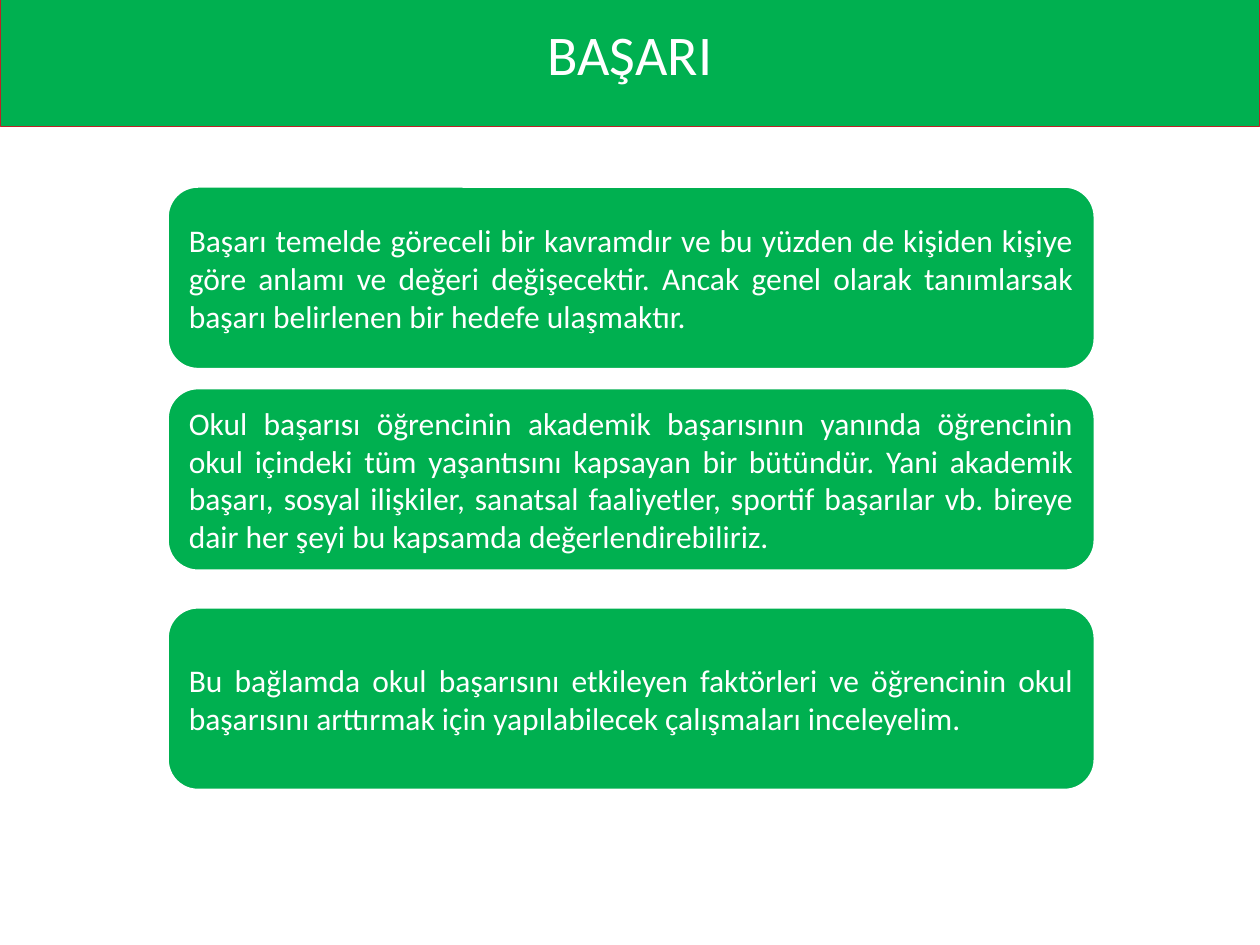
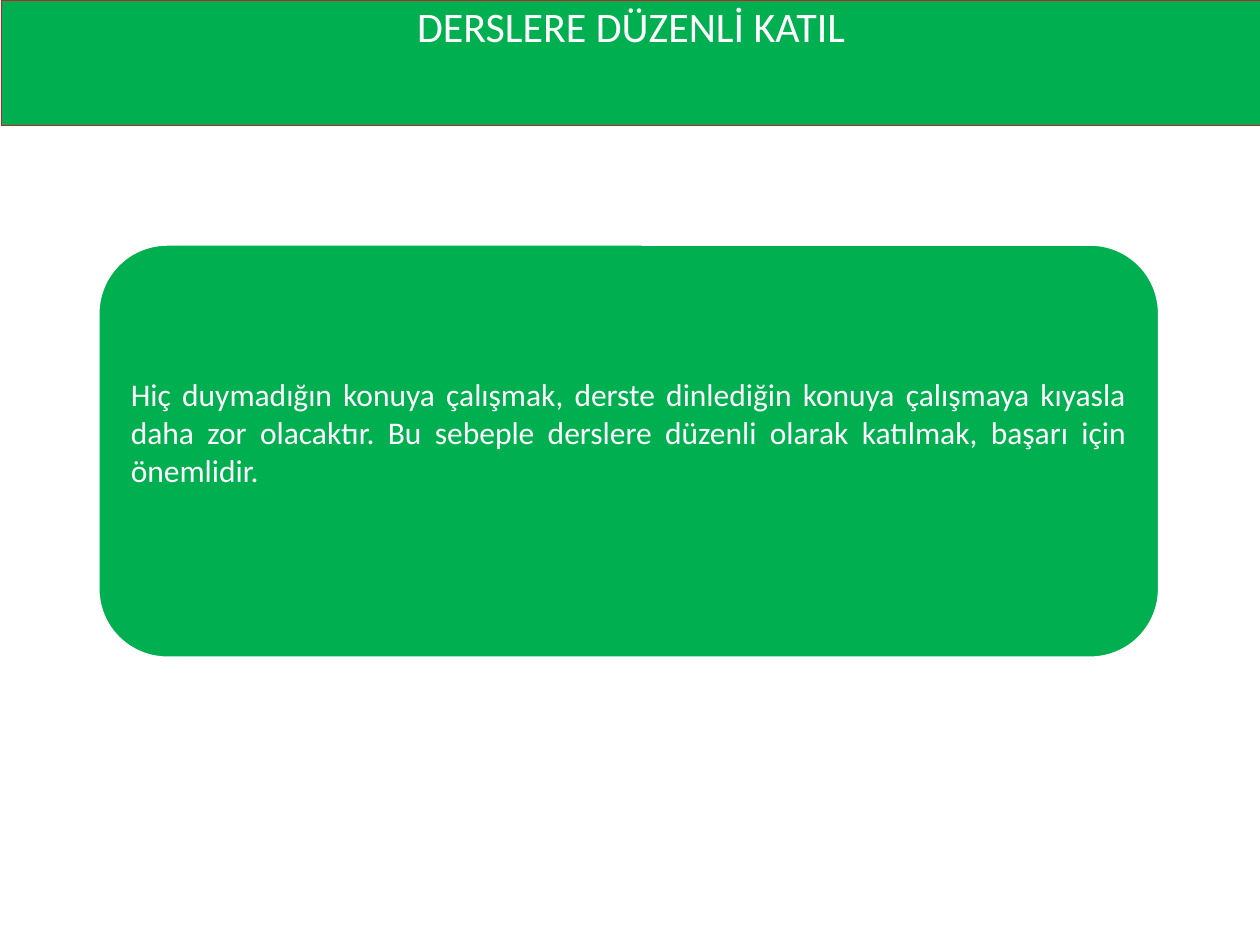
from dataclasses import dataclass

from pptx import Presentation
from pptx.dml.color import RGBColor
from pptx.enum.shapes import MSO_SHAPE
from pptx.enum.text import MSO_ANCHOR, PP_ALIGN
from pptx.slide import Slide
from pptx.util import Inches, Pt

GREEN = "00B050"
RED = "BB2326"
WHITE = "FFFFFF"
FONT = "Calibri"


@dataclass(frozen=True)
class Panel:
    """A green shape with white text; lengths are in inches, sizes in points."""

    text: str
    left: float
    top: float
    width: float
    height: float
    size: int = 18
    shape: MSO_SHAPE = MSO_SHAPE.ROUNDED_RECTANGLE
    border: str = WHITE
    border_width: float = 1.5
    align: PP_ALIGN = PP_ALIGN.JUSTIFY
    anchor: MSO_ANCHOR = MSO_ANCHOR.MIDDLE
    line_spacing: float = 1.0
    bottom_inset: float = 0.05


def title_band(text: str, left: float, top: float, size: int, anchor: MSO_ANCHOR) -> Panel:
    """Describe a full-width title band whose lower edge is one inch down."""
    return Panel(text, left, top, 10, 1 - top, size, MSO_SHAPE.RECTANGLE,
                 RED, 0.5, PP_ALIGN.CENTER, anchor, 0.9)


def success_card(text: str, top: float) -> Panel:
    return Panel(text, 1.33, top, 7.36, 1.45)


SLIDES = [
    [
        title_band("BAŞARI", 0, -0.09, 32, MSO_ANCHOR.MIDDLE),
        success_card(
            "Başarı temelde göreceli bir kavramdır ve bu yüzden de kişiden kişiye göre "
            "anlamı ve değeri değişecektir. Ancak genel olarak tanımlarsak başarı "
            "belirlenen bir hedefe ulaşmaktır.", 1.48),
        success_card(
            "Okul başarısı öğrencinin akademik başarısının yanında öğrencinin okul "
            "içindeki tüm yaşantısını kapsayan bir bütündür. Yani akademik başarı, "
            "sosyal ilişkiler, sanatsal faaliyetler, sportif başarılar vb. bireye dair "
            "her şeyi bu kapsamda değerlendirebiliriz.", 3.08),
        success_card(
            "Bu bağlamda okul başarısını etkileyen faktörleri ve öğrencinin okul "
            "başarısını arttırmak için yapılabilecek çalışmaları inceleyelim.", 4.82),
    ],
    [
        title_band("DERSLERE DÜZENLİ KATIL", 0.01, 0, 24, MSO_ANCHOR.TOP),
        Panel(
            "Hiç duymadığın konuya çalışmak, derste dinlediğin konuya çalışmaya kıyasla "
            "daha zor olacaktır. Bu sebeple derslere düzenli olarak katılmak, başarı "
            "için önemlidir.", 0.78, 1.94, 8.42, 3.28, bottom_inset=0.35),
    ],
]


def color(value: str) -> RGBColor:
    return RGBColor.from_string(value)


def draw_panel(page: Slide, panel: Panel) -> None:
    box = page.shapes.add_shape(panel.shape, Inches(panel.left), Inches(panel.top),
                                Inches(panel.width), Inches(panel.height))
    box.shadow.inherit = False
    box.fill.solid()
    box.fill.fore_color.rgb = color(GREEN)
    box.line.color.rgb = color(panel.border)
    box.line.width = Pt(panel.border_width)

    frame = box.text_frame
    frame.text = panel.text
    frame.word_wrap = True
    frame.vertical_anchor = panel.anchor
    frame.margin_bottom = Inches(panel.bottom_inset)
    para = frame.paragraphs[0]
    para.alignment = panel.align
    para.line_spacing = panel.line_spacing
    for span in para.runs:
        span.font.name = FONT
        span.font.size = Pt(panel.size)
        span.font.color.rgb = color(WHITE)


def main() -> None:
    deck = Presentation()
    deck.slide_width = Inches(10)
    deck.slide_height = Inches(7.5)
    blank_layout = deck.slide_layouts[6]
    for panels in SLIDES:
        page = deck.slides.add_slide(blank_layout)
        for panel in panels:
            draw_panel(page, panel)
    deck.save("out.pptx")


if __name__ == "__main__":
    main()
